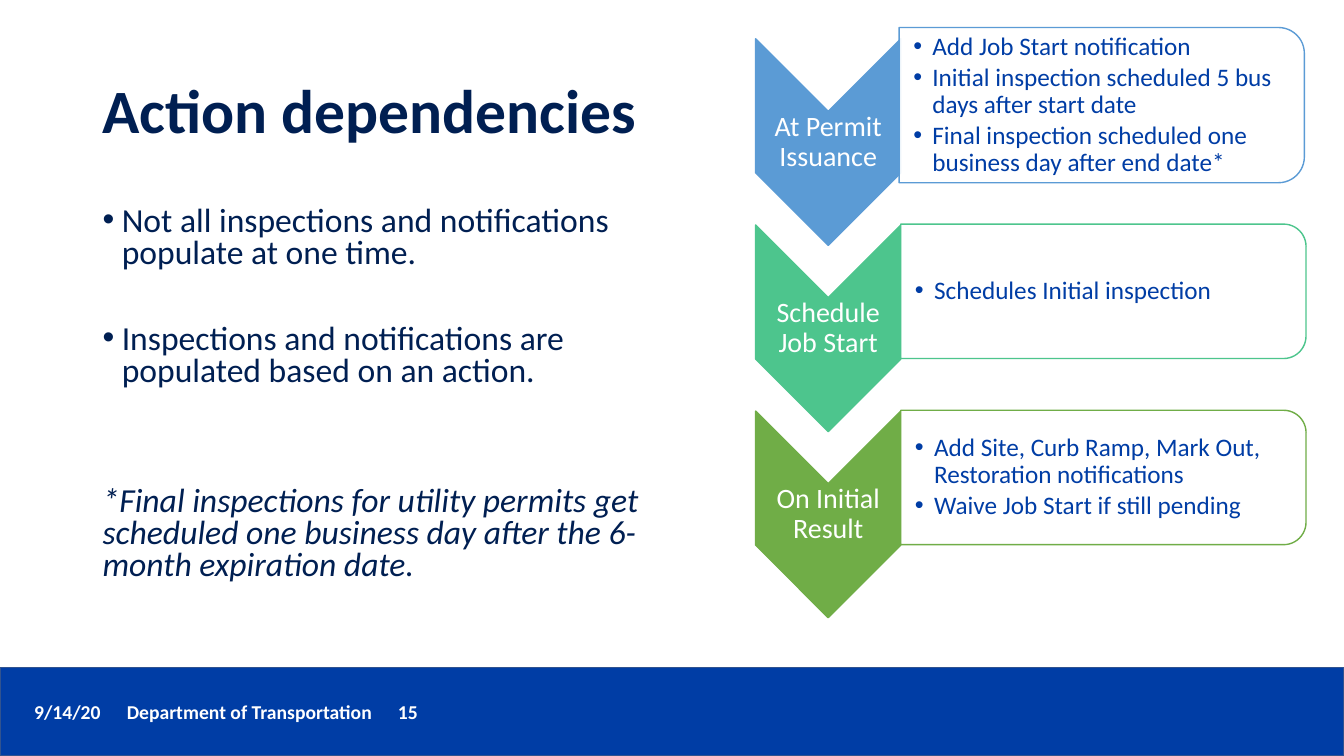
from typing import NamedTuple

from lxml.etree import SubElement
from pptx import Presentation
from pptx.dml.color import RGBColor
from pptx.enum.shapes import MSO_SHAPE
from pptx.enum.text import MSO_ANCHOR, PP_ALIGN
from pptx.oxml.ns import qn
from pptx.util import Emu, Inches, Pt

# Square grid: 40 columns by 22.5 rows
CELL = Inches(1) / 3
COLUMNS, ROWS = 40, 22.5

FONT = "Calibri"
WHITE = RGBColor(0xFF, 0xFF, 0xFF)
NAVY = RGBColor(0x00, 0x1F, 0x52)
ROYAL = RGBColor(0x00, 0x3D, 0xA5)
FOOTER_EDGE = RGBColor(0x31, 0x53, 0x8F)
BLUE = RGBColor(0x5B, 0x9B, 0xD5)
MINT = RGBColor(0x4D, 0xC5, 0x8D)
GREEN = RGBColor(0x70, 0xAD, 0x47)

# Step column, in cells
CHEVRON_CENTER, FIRST_CENTER, STEP_PITCH = 24.65, 4.23, 5.54
CHEVRON_LENGTH, CHEVRON_WIDTH = 6.15, 4.32
LABEL_HEIGHT = 1.86
PANEL_WIDTH, PANEL_RISE = 12.06, 1.1
PANEL_TEXT_WIDTH, PANEL_MARGIN = 11.84, 0.2
HANGING = 0.57


class Area(NamedTuple):
    left: float
    top: float
    width: float
    height: float


class Style(NamedTuple):
    size: float
    color: RGBColor
    bold: bool = False
    italic: bool = False
    spacing: float = 1.0
    bullet: bool = False
    align: PP_ALIGN = PP_ALIGN.LEFT
    before: float = 0
    after: float = 0


class Step(NamedTuple):
    label: str
    color: RGBColor
    panel_left: float
    panel_height: float
    actions: tuple[str, ...]


STEPS = (
    Step("At Permit Issuance", BLUE, 26.76, 4.62, (
        "Add Job Start notification",
        "Initial inspection scheduled 5 bus days after start date",
        "Final inspection scheduled one business day after end date*",
    )),
    Step("Schedule Job Start", MINT, 26.81, 4.0, ("Schedules Initial inspection",)),
    Step("On Initial Result", GREEN, 26.81, 4.0, (
        "Add Site, Curb Ramp, Mark Out, Restoration notifications",
        "Waive Job Start if still pending",
    )),
)

TITLE = Style(44, NAVY, bold=True, spacing=0.9)
POINT = Style(24, NAVY, spacing=0.8, bullet=True)
NOTE = Style(24, NAVY, italic=True, spacing=0.8, before=69.3)
LABEL = Style(20, WHITE, spacing=0.9, align=PP_ALIGN.CENTER)
ACTION = Style(18, ROYAL, spacing=0.9, bullet=True, after=2.7)
FOOTER = Style(14, WHITE, bold=True)


def cells(count: float) -> Emu:
    return Emu(round(count * CELL))


def centered(x: float, y: float, width: float, height: float) -> Area:
    return Area(x - width / 2, y - height / 2, width, height)


def add_block(page, kind: MSO_SHAPE, area: Area, fill: RGBColor, line: RGBColor, rotation: float = 0):
    block = page.shapes.add_shape(kind, *map(cells, area))
    block.shadow.inherit = False
    block.rotation = rotation
    block.fill.solid()
    block.fill.fore_color.rgb = fill
    block.line.color.rgb = line
    block.line.width = Pt(1)
    return block


def add_text(page, area: Area, lines: list[tuple[str, Style]], anchor=MSO_ANCHOR.TOP, margins=None):
    box = page.shapes.add_textbox(*map(cells, area))
    frame = box.text_frame
    frame.word_wrap = True
    frame.vertical_anchor = anchor
    if margins:
        frame.margin_left, frame.margin_top, frame.margin_right, frame.margin_bottom = map(Inches, margins)
    for index, (text, style) in enumerate(lines):
        para = frame.add_paragraph() if index else frame.paragraphs[0]
        if style.bullet:
            properties = para._p.get_or_add_pPr()
            properties.set("marL", str(cells(HANGING)))
            properties.set("indent", str(-cells(HANGING)))
            SubElement(properties, qn("a:buFont"), typeface="Arial")
            SubElement(properties, qn("a:buChar"), char="•")
        para.alignment = style.align
        para.line_spacing = style.spacing
        para.space_before, para.space_after = Pt(style.before), Pt(style.after)
        span = para.add_run()
        span.text = text
        span.font.name = FONT
        span.font.size = Pt(style.size)
        span.font.bold, span.font.italic = style.bold, style.italic
        span.font.color.rgb = style.color
    return box


def add_step(page, step: Step, center: float) -> None:
    # Chevron and its label share one center
    add_block(page, MSO_SHAPE.CHEVRON, centered(CHEVRON_CENTER, center, CHEVRON_LENGTH, CHEVRON_WIDTH),
              step.color, step.color, 90)
    add_text(page, centered(CHEVRON_CENTER, center, CHEVRON_WIDTH, LABEL_HEIGHT),
             [(step.label, LABEL)], MSO_ANCHOR.MIDDLE, (0.01,) * 4)

    # Panel, turned so that its rounded corners face right
    middle = center - PANEL_RISE
    panel = add_block(page, MSO_SHAPE.ROUND_2_SAME_RECTANGLE,
                      centered(step.panel_left + PANEL_WIDTH / 2, middle, step.panel_height, PANEL_WIDTH),
                      WHITE, step.color, 90)
    fill_color = panel._element.spPr.find(qn("a:solidFill"))[0]
    SubElement(fill_color, qn("a:alpha"), val="90000")
    text_height = step.panel_height - 2 * PANEL_MARGIN
    add_text(page, Area(step.panel_left, middle - text_height / 2, PANEL_TEXT_WIDTH, text_height),
             [(action, ACTION) for action in step.actions], MSO_ANCHOR.MIDDLE, (0.14, 0.01, 0.01, 0.01))


def add_footer(page) -> None:
    add_block(page, MSO_SHAPE.RECTANGLE, Area(0, 19.86, COLUMNS, 2.64), ROYAL, FOOTER_EDGE)
    box = add_text(page, Area(0.72, 20.67, 30.18, 1.02),
                   [("9/14/20\tDepartment of Transportation\t15", FOOTER)])
    stops = SubElement(box.text_frame.paragraphs[0]._p.get_or_add_pPr(), qn("a:tabLst"))
    for stop in (2.76, 10.83):
        SubElement(stops, qn("a:tab"), pos=str(cells(stop)), algn="l")


def main() -> None:
    deck = Presentation()
    deck.slide_width, deck.slide_height = cells(COLUMNS), cells(ROWS)
    page = deck.slides.add_slide(deck.slide_layouts[6])

    add_footer(page)

    # Title and explanation
    add_text(page, Area(2.76, 1.2, 34.5, 4.35), [("Action dependencies", TITLE)], MSO_ANCHOR.MIDDLE)
    add_text(page, Area(2.76, 6, 17.01, 11.91), [
        ("Not all inspections and notifications populate at one time.", POINT),
        ("Inspections and notifications are populated based on an action.", POINT._replace(before=38.4)),
        ("*Final inspections for utility permits get scheduled one business day after the 6- month "
         "expiration date.", NOTE),
    ])

    # Steps
    for index, step in enumerate(STEPS):
        add_step(page, step, FIRST_CENTER + index * STEP_PITCH)

    deck.save("out.pptx")


if __name__ == "__main__":
    main()
